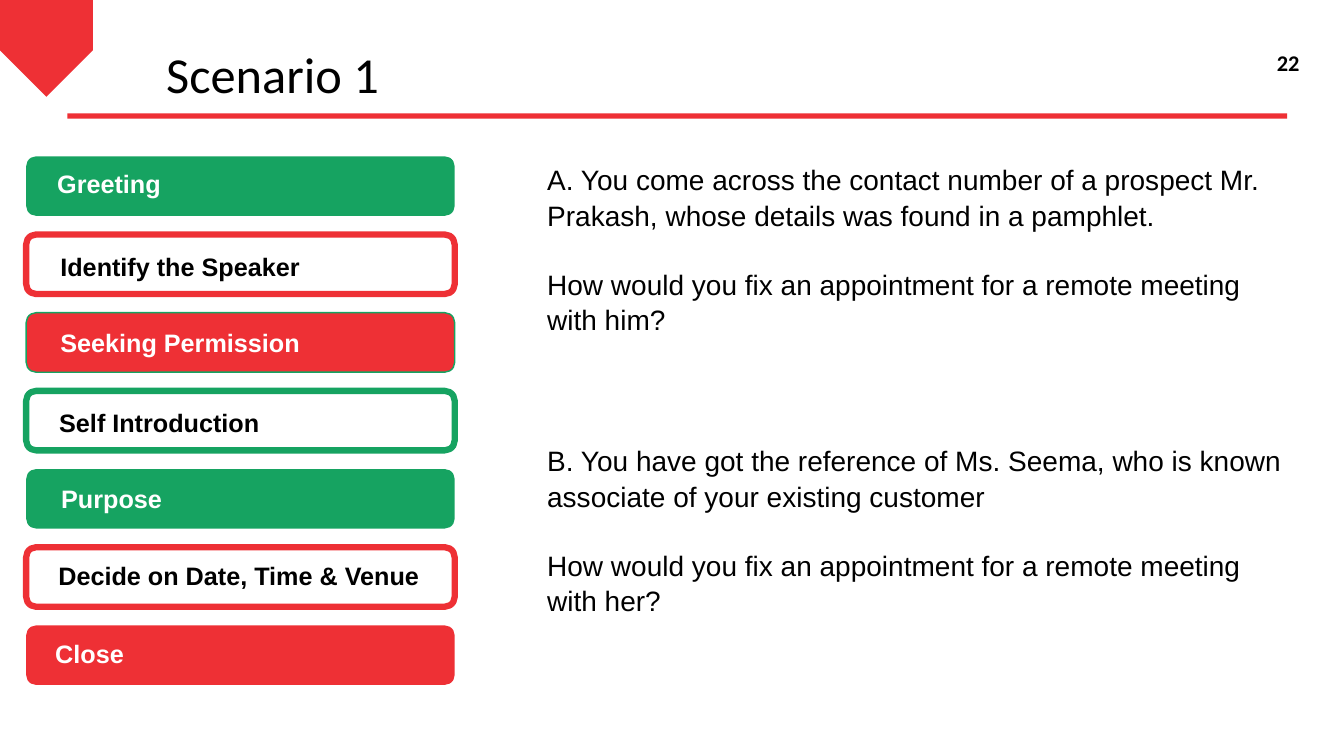
from dataclasses import dataclass
from typing import Optional

from pptx import Presentation
from pptx.dml.color import RGBColor
from pptx.enum.shapes import MSO_SHAPE
from pptx.enum.text import MSO_ANCHOR, PP_ALIGN
from pptx.shapes.autoshape import Shape
from pptx.slide import Slide
from pptx.util import Cm, Pt


@dataclass(frozen=True)
class Theme:
    red: RGBColor = RGBColor(0xEE, 0x30, 0x35)
    green: RGBColor = RGBColor(0x16, 0xA3, 0x61)
    white: RGBColor = RGBColor(0xFF, 0xFF, 0xFF)
    black: RGBColor = RGBColor(0, 0, 0)
    heading_font: str = "Calibri"
    body_font: str = "Arial"
    title_size: Pt = Pt(36)
    body_size: Pt = Pt(20)
    step_size: Pt = Pt(18)
    number_size: Pt = Pt(16)
    frame_width: float = 4.5
    hairline: float = 1


THEME = Theme()


@dataclass(frozen=True)
class Box:
    """A rectangle measured in centimetres."""
    left: float
    top: float
    width: float
    height: float


@dataclass(frozen=True)
class CallStep:
    label: str
    indent: float
    drop: float
    fill: RGBColor
    text_color: RGBColor = THEME.white
    outline: Optional[RGBColor] = None
    outline_width: float = THEME.frame_width


@dataclass(frozen=True)
class Question:
    top: float
    situation: str
    task: str


FIRST_STEP = Box(0.66, 3.94, 10.8, 1.5)
STEP_PITCH = 1.97

CALL_STEPS = [
    CallStep("Greeting", 0.71, 0.23, THEME.green),
    CallStep("Identify the Speaker", 0.79, 0.36, THEME.white, THEME.black, THEME.red),
    CallStep("Seeking Permission", 0.79, 0.3, THEME.red,
             outline=THEME.green, outline_width=THEME.hairline),
    CallStep("Self Introduction", 0.76, 0.33, THEME.white, THEME.black, THEME.green),
    CallStep("Purpose", 0.81, 0.28, THEME.green),
    CallStep("Decide on Date, Time & Venue", 0.74, 0.25, THEME.white, THEME.black, THEME.red),
    CallStep("Close", 0.66, 0.25, THEME.red),
]

QUESTIONS = [
    Question(3.94,
             "A. You come across the contact number of a prospect Mr. Prakash, "
             "whose details was found in a pamphlet.",
             "How would you fix an appointment for a remote meeting with him?"),
    Question(11.02,
             "B. You have got the reference of Ms. Seema, who is known "
             "associate of your existing customer",
             "How would you fix an appointment for a remote meeting with her?"),
]


def add_filled_shape(slide: Slide, kind: MSO_SHAPE, box: Box, fill: RGBColor) -> Shape:
    shape = slide.shapes.add_shape(
        kind, Cm(box.left), Cm(box.top), Cm(box.width), Cm(box.height))
    shape.shadow.inherit = False
    shape.fill.solid()
    shape.fill.fore_color.rgb = fill
    shape.line.fill.background()
    return shape


def write_paragraphs(shape: Shape, texts: list[str], font: str, size: Pt,
                     color: RGBColor, bold: bool = False) -> None:
    frame = shape.text_frame
    frame.word_wrap = True
    frame.text = "\n".join(texts)
    for paragraph in frame.paragraphs:
        paragraph.alignment = PP_ALIGN.LEFT
        paragraph.font.name = font
        paragraph.font.size = size
        paragraph.font.bold = bold
        paragraph.font.color.rgb = color


def add_text(slide: Slide, box: Box, texts: list[str], font: str, size: Pt,
             bold: bool = False) -> Shape:
    shape = slide.shapes.add_textbox(
        Cm(box.left), Cm(box.top), Cm(box.width), Cm(box.height))
    write_paragraphs(shape, texts, font, size, THEME.black, bold)
    return shape


def add_header(slide: Slide) -> None:
    pennant = add_filled_shape(
        slide, MSO_SHAPE.PENTAGON, Box(-0.05, 0.05, 2.44, 2.34), THEME.red)
    pennant.rotation = 90
    add_filled_shape(slide, MSO_SHAPE.RECTANGLE, Box(1.7, 2.86, 30.74, 0.13), THEME.red)
    add_text(slide, Box(31.93, 1.12, 1.24, 0.94), ["22"],
             THEME.heading_font, THEME.number_size, bold=True)
    title = add_text(slide, Box(3.94, 1.02, 28.24, 1.83), ["Scenario 1"],
                     THEME.heading_font, THEME.title_size)
    title.text_frame.vertical_anchor = MSO_ANCHOR.MIDDLE
    title.text_frame.paragraphs[0].line_spacing = 0.9


def add_call_step(slide: Slide, step: CallStep, top: float) -> None:
    box = Box(FIRST_STEP.left, top, FIRST_STEP.width, FIRST_STEP.height)
    shape = add_filled_shape(slide, MSO_SHAPE.ROUNDED_RECTANGLE, box, step.fill)
    if step.outline is not None:
        shape.line.color.rgb = step.outline
        shape.line.width = Pt(step.outline_width)
    write_paragraphs(shape, [step.label], THEME.body_font, THEME.step_size,
                     step.text_color, bold=True)
    frame = shape.text_frame
    frame.vertical_anchor = MSO_ANCHOR.TOP
    frame.margin_left = Cm(step.indent)
    frame.margin_top = Cm(step.drop)
    frame.margin_right = frame.margin_bottom = 0


def add_question(slide: Slide, question: Question) -> None:
    shape = add_text(slide, Box(13.54, question.top, 19.2, 4.52),
                     [question.situation, question.task],
                     THEME.body_font, THEME.body_size)
    for paragraph in shape.text_frame.paragraphs:
        paragraph.line_spacing = 1.05
    shape.text_frame.paragraphs[1].space_before = Pt(24)


def main() -> None:
    presentation = Presentation()
    presentation.slide_width = Cm(33.87)
    presentation.slide_height = Cm(19.05)
    slide = presentation.slides.add_slide(presentation.slide_layouts[6])
    add_header(slide)
    for index, step in enumerate(CALL_STEPS):
        add_call_step(slide, step, FIRST_STEP.top + index * STEP_PITCH)
    for question in QUESTIONS:
        add_question(slide, question)
    presentation.save("out.pptx")


if __name__ == "__main__":
    main()
